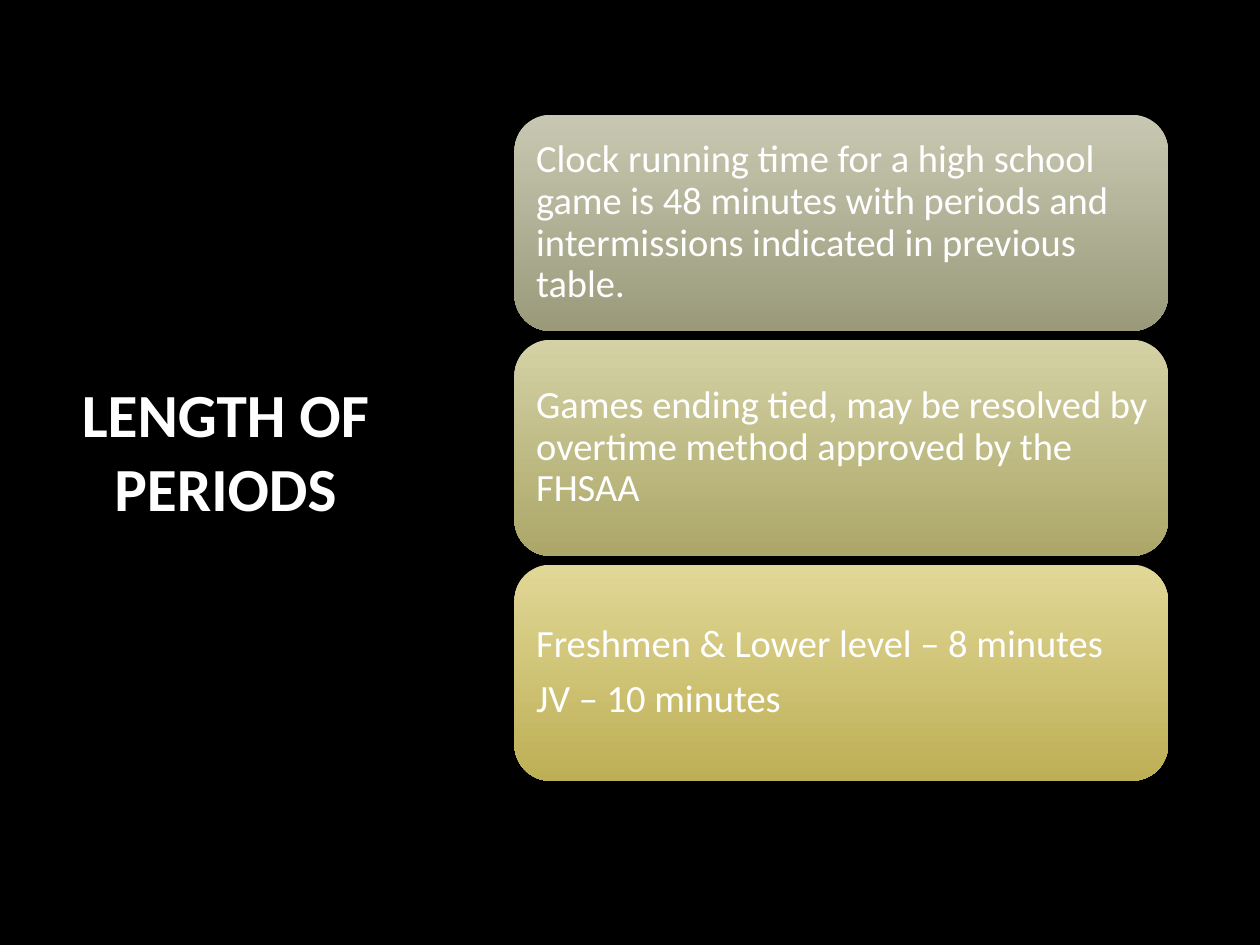
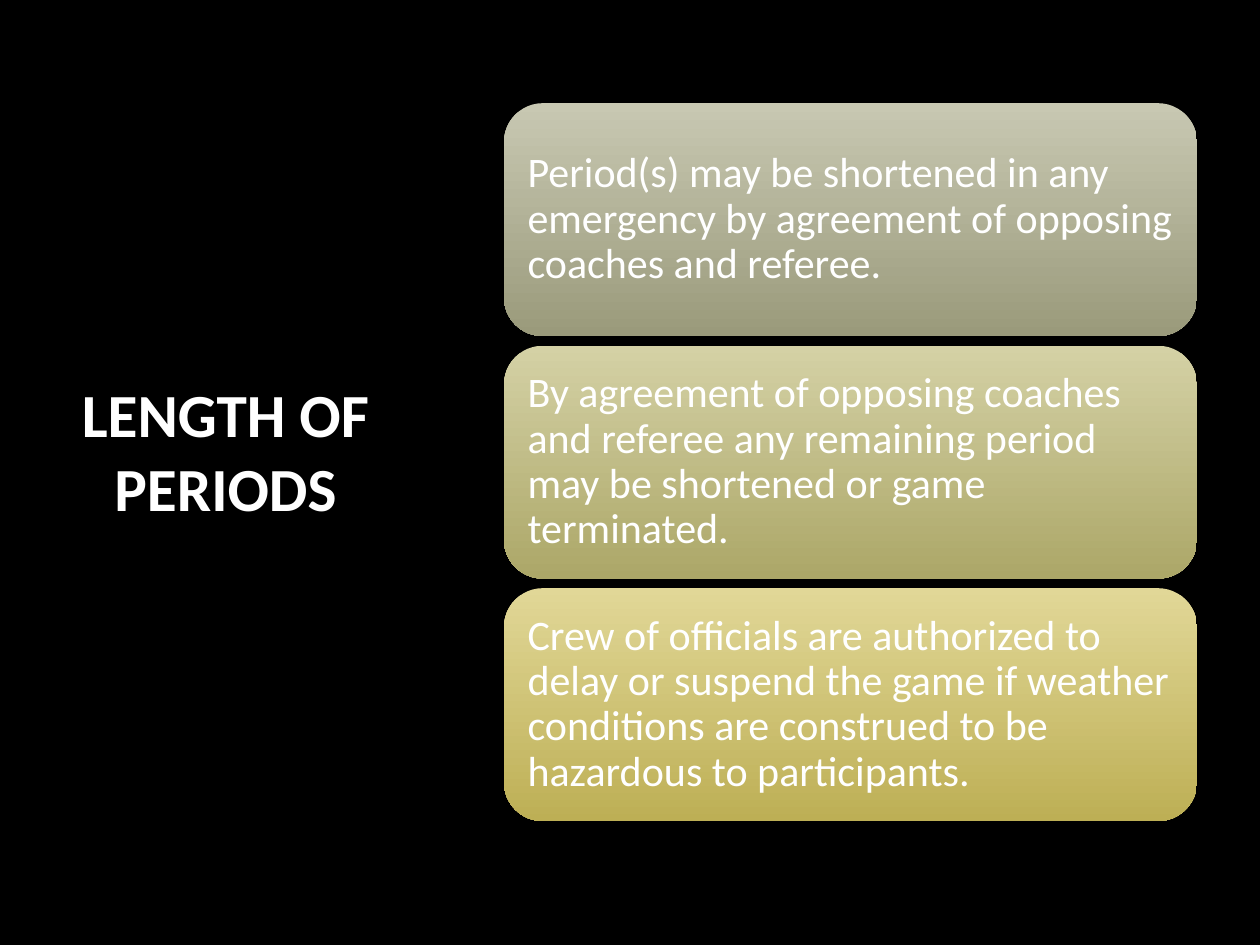
from pptx import Presentation
from pptx.dml.color import RGBColor
from pptx.enum import shapes, text
from pptx.util import Pt

COLORS = {
    "background": "000000",
    "text": "FFFFFF",
    "sage_top": "C8C8B2", "sage_bottom": "9A9A7B",
    "olive_top": "D4D1A5", "olive_bottom": "ACA768",
    "gold_top": "E1D797", "gold_bottom": "BDAF55",
}
CARD_TONES = ("sage", "olive", "gold")
FONT = "Calibri"
TITLE = "LENGTH OF PERIODS"
TITLE_BOX = (39.6, 112.3, 178.6, 289.4)

# Each slide: stack box (left, top, width, height), gap, font size, inset, cards
SLIDES = [
    ((294, 65.6, 373.5, 380.6), 5, 22, 6.4, [
        ["Clock running time for a high school game is 48 minutes with "
         "periods and intermissions indicated in previous table."],
        ["Games ending tied, may be resolved by overtime method approved "
         "by the FHSAA"],
        ["Freshmen & Lower level – 8 minutes", "JV – 10 minutes"],
    ]),
    ((288, 59, 396, 410.2), 5.5, 24, 7, [
        ["Period(s) may be shortened in any emergency by agreement of "
         "opposing coaches and referee."],
        ["By agreement of opposing coaches and referee any remaining period "
         "may be shortened or game terminated."],
        ["Crew of officials are authorized to delay or suspend the game if "
         "weather conditions are construed to be hazardous to participants."],
    ]),
]


def color(name):
    return RGBColor.from_string(COLORS[name])


def style_paragraph(paragraph, size, align, bold=False):
    paragraph.alignment = align
    paragraph.font.name = FONT
    paragraph.font.size = Pt(size)
    paragraph.font.bold = bold
    paragraph.font.color.rgb = color("text")


def add_title(slide, box):
    frame = slide.shapes.add_textbox(*map(Pt, box)).text_frame
    frame.word_wrap = True
    frame.vertical_anchor = text.MSO_ANCHOR.MIDDLE
    frame.text = TITLE
    style_paragraph(frame.paragraphs[0], 35, text.PP_ALIGN.CENTER, bold=True)


def add_card(slide, box, tone, lines, size, inset):
    card = slide.shapes.add_shape(
        shapes.MSO_SHAPE.ROUNDED_RECTANGLE, *map(Pt, box))
    card.shadow.inherit = False
    card.line.fill.background()

    # Vertical gradient, light at the top
    card.fill.gradient()
    card.fill.gradient_angle = 270
    for stop, end in zip(card.fill.gradient_stops, ("top", "bottom")):
        stop.color.rgb = color(f"{tone}_{end}")

    # Rule text
    frame = card.text_frame
    frame.word_wrap = True
    frame.vertical_anchor = text.MSO_ANCHOR.MIDDLE
    frame.margin_left = frame.margin_top = frame.margin_bottom = Pt(inset)
    frame.margin_right = Pt(inset - 1)
    frame.text = "\n".join(lines)
    for paragraph in frame.paragraphs:
        style_paragraph(paragraph, size, text.PP_ALIGN.LEFT)
        paragraph.line_spacing = 0.9
        paragraph.space_after = Pt(round(0.35 * size, 1))


def add_card_stack(slide, box, gap, size, inset, cards):
    left, top, width, height = box
    card_height = (height - gap * (len(cards) - 1)) / len(cards)
    for row, (tone, lines) in enumerate(zip(CARD_TONES, cards)):
        card_top = top + row * (card_height + gap)
        add_card(slide, (left, card_top, width, card_height),
                 tone, lines, size, inset)


def add_rules_slide(deck, *stack):
    slide = deck.slides.add_slide(deck.slide_layouts[6])
    slide.background.fill.solid()
    slide.background.fill.fore_color.rgb = color("background")
    add_title(slide, TITLE_BOX)
    add_card_stack(slide, *stack)


def main():
    deck = Presentation()
    deck.slide_width, deck.slide_height = Pt(720), Pt(540)
    for stack in SLIDES:
        add_rules_slide(deck, *stack)
    deck.save("out.pptx")


if __name__ == "__main__":
    main()
